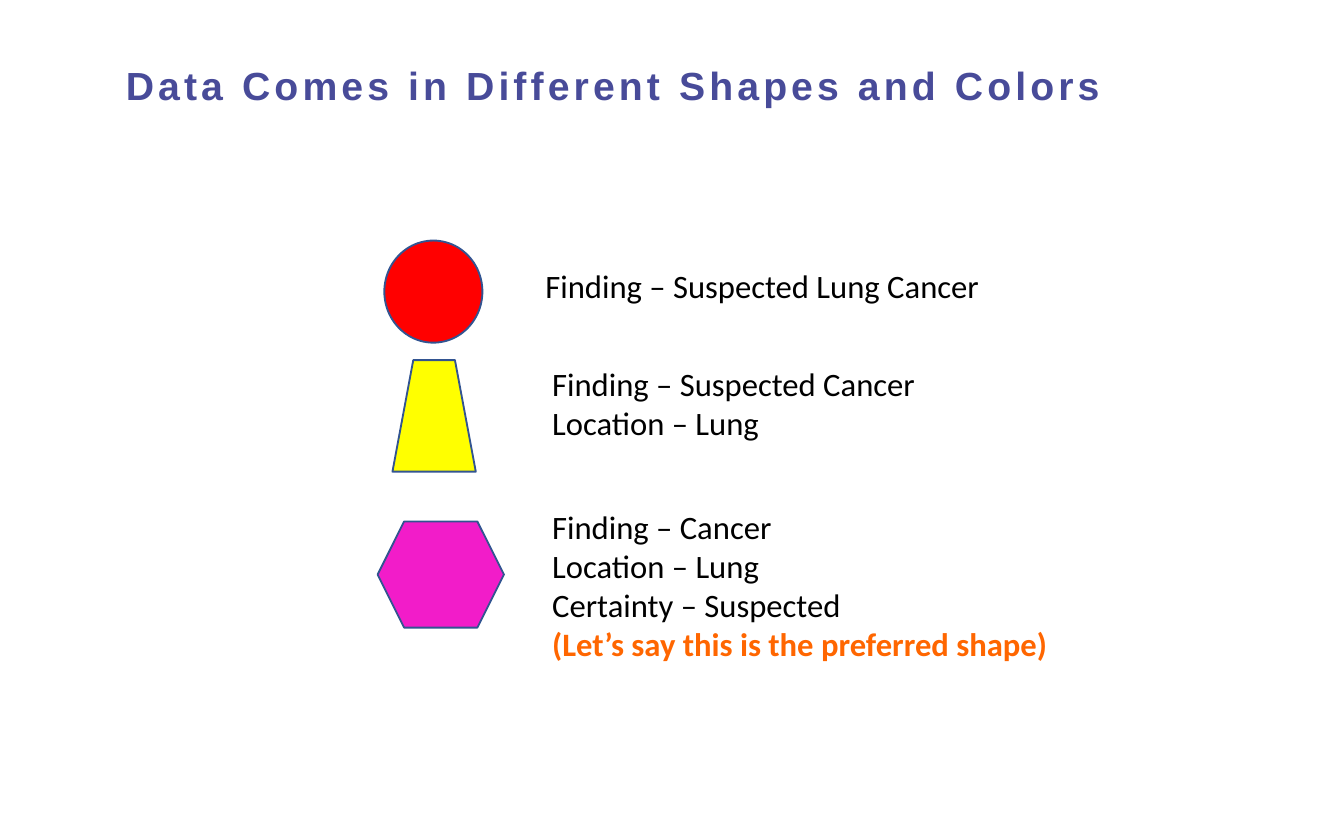
from typing import NamedTuple

from pptx import Presentation
from pptx.dml.color import RGBColor
from pptx.enum.shapes import MSO_SHAPE
from pptx.enum.text import MSO_ANCHOR, MSO_AUTO_SIZE, PP_ALIGN
from pptx.util import Inches, Pt

BLACK = RGBColor(0x00, 0x00, 0x00)
INDIGO = RGBColor(0x48, 0x4B, 0x99)
ORANGE = RGBColor(0xFF, 0x66, 0x00)
RED = RGBColor(0xFF, 0x00, 0x00)
YELLOW = RGBColor(0xFF, 0xFF, 0x00)
PINK = RGBColor(0xF2, 0x1C, 0xC9)
EDGE = RGBColor(0x32, 0x54, 0x91)

WIDE, HIGH = Inches(10), Inches(6.25)


class Box(NamedTuple):
    """Left, top, width and height in hundredths of the slide."""
    x: float
    y: float
    w: float
    h: float

    def place(self) -> tuple[int, int, int, int]:
        return (round(self.x * WIDE / 100), round(self.y * HIGH / 100),
                round(self.w * WIDE / 100), round(self.h * HIGH / 100))


class Datum(NamedTuple):
    kind: MSO_SHAPE
    fill: RGBColor
    mark: Box
    area: Box
    lines: list[str]
    note: str = ""


DATA = [
    Datum(MSO_SHAPE.OVAL, RED, Box(28.6, 28.64, 7.3, 12.16),
          Box(39.6, 30.88, 34.7, 6.4), ["Finding – Suspected Lung Cancer"]),
    Datum(MSO_SHAPE.TRAPEZOID, YELLOW, Box(29.2, 42.88, 6.2, 13.28),
          Box(40.1, 42.56, 29.4, 11.04),
          ["Finding – Suspected Cancer", "Location – Lung"]),
    Datum(MSO_SHAPE.HEXAGON, PINK, Box(28.1, 62.08, 9.4, 12.64),
          Box(40.1, 59.52, 39.8, 20.48),
          ["Finding – Cancer", "Location – Lung", "Certainty – Suspected"],
          "(Let’s say this is the preferred shape)"),
]


def write(para, text: str, *, size: float = 17.5, face: str = "Calibri",
          color: RGBColor = BLACK, bold: bool = False, gap: int = 0) -> None:
    run = para.add_run()
    run.text = text
    font = run.font
    font.size, font.name, font.bold = Pt(size), face, bold
    font.color.rgb = color
    if gap:
        font._element.set("spc", str(gap))


def draw_title(slide, text: str) -> None:
    title = slide.shapes.title
    title.left, title.top, title.width, title.height = Box(
        0, 4.16, 91.3, 12.48).place()
    frame = title.text_frame
    frame.auto_size = MSO_AUTO_SIZE.NONE
    frame.vertical_anchor = MSO_ANCHOR.MIDDLE
    para = frame.paragraphs[0]
    para.alignment, para.line_spacing = PP_ALIGN.CENTER, 0.9
    write(para, text, size=21, face="Arial", color=INDIGO, bold=True, gap=220)


def draw_mark(slide, datum: Datum) -> None:
    mark = slide.shapes.add_shape(datum.kind, *datum.mark.place())
    mark.shadow.inherit = False
    mark.fill.solid()
    mark.fill.fore_color.rgb = datum.fill
    mark.line.color.rgb = EDGE
    mark.line.width = Pt(1)


def draw_text(slide, datum: Datum) -> None:
    frame = slide.shapes.add_textbox(*datum.area.place()).text_frame
    frame.word_wrap = False
    frame.auto_size = MSO_AUTO_SIZE.SHAPE_TO_FIT_TEXT
    for i, line in enumerate(datum.lines):
        write(frame.add_paragraph() if i else frame.paragraphs[0], line)
    if datum.note:
        write(frame.add_paragraph(), datum.note, color=ORANGE, bold=True)


def main() -> None:
    deck = Presentation()
    deck.slide_width, deck.slide_height = WIDE, HIGH
    slide = deck.slides.add_slide(deck.slide_layouts[5])

    # Heading
    draw_title(slide, "Data Comes in Different Shapes and Colors")

    # Each shape with its reading
    for datum in DATA:
        draw_mark(slide, datum)
        draw_text(slide, datum)

    deck.save("out.pptx")


if __name__ == "__main__":
    main()
